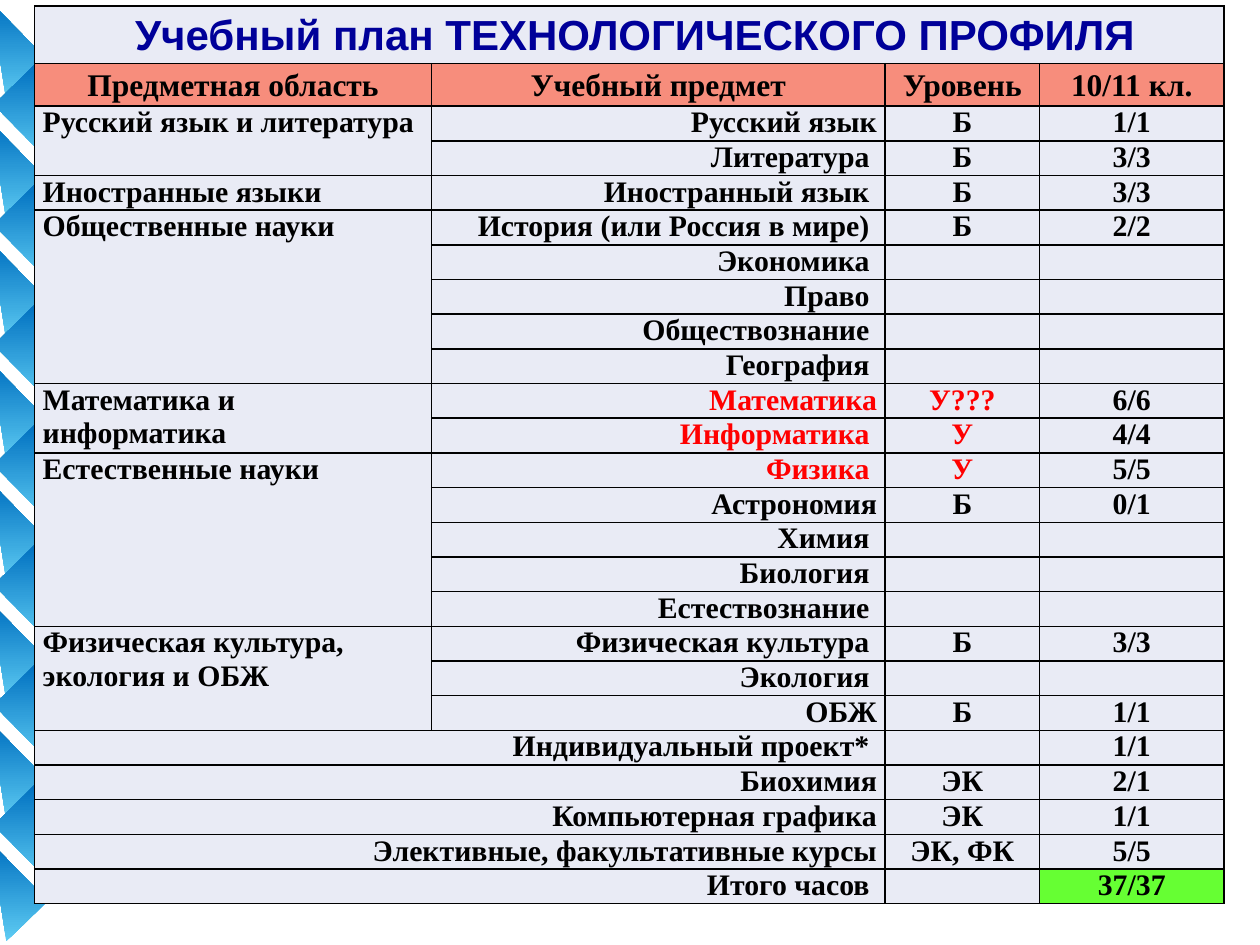
from dataclasses import dataclass

from lxml import etree
from pptx import Presentation
from pptx.dml.color import RGBColor
from pptx.enum.text import PP_ALIGN
from pptx.oxml.ns import qn
from pptx.util import Cm, Pt

LEFT, CENTER, RIGHT = PP_ALIGN.LEFT, PP_ALIGN.CENTER, PP_ALIGN.RIGHT


@dataclass(frozen=True)
class Theme:
    title_font: str = "Arial"
    body_font: str = "Times New Roman"
    title_size: int = 24
    header_size: int = 18
    body_size: int = 17
    empty_size: int = 12
    title: str = "000099"
    ink: str = "000000"
    advanced: str = "FF0000"
    cell: str = "E9EBF5"
    header: str = "F78D7C"
    total: str = "66FF33"
    ribbon_light: str = "5ECCF3"
    ribbon_dark: str = "0070C0"
    border: float = 1


THEME = Theme()

TITLE = " Учебный план ТЕХНОЛОГИЧЕСКОГО ПРОФИЛЯ"
HEADERS = ("Предметная область", "Учебный предмет", "Уровень", "10/11 кл.")

# Subject area -> (subject, level, hours)
AREAS = {
    "Русский язык и литература": [
        ("Русский язык", "Б", "1/1"), ("Литература ", "Б", "3/3")],
    "Иностранные языки": [("Иностранный язык ", "Б", "3/3")],
    "Общественные науки": [
        ("История (или Россия в мире) ", "Б", "2/2"), ("Экономика ", "", ""),
        ("Право ", "", ""), ("Обществознание ", "", ""), ("География ", "", "")],
    "Математика и информатика": [
        ("Математика", "У???", "6/6"), ("Информатика ", "У", "4/4")],
    "Естественные науки": [
        ("Физика ", "У", "5/5"), ("Астрономия", "Б", "0/1"), ("Химия ", "", ""),
        ("Биология ", "", ""), ("Естествознание ", "", "")],
    "Физическая культура, экология и ОБЖ": [
        ("Физическая культура ", "Б", "3/3"), ("Экология ", "", ""),
        ("ОБЖ", "Б", "1/1")],
}
EXTRAS = [
    ("Индивидуальный проект* ", "", "1/1"),
    ("Биохимия", "ЭК", "2/1"),
    ("Компьютерная графика", "ЭК", "1/1"),
    ("Элективные, факультативные курсы", "ЭК, ФК", "5/5"),
    ("Итого часов ", "", "37/37"),
]

# Sizes in centimetres
COLUMN_WIDTHS = (8.0, 9.14, 3.12, 3.71)
TITLE_HEIGHT, HEADER_HEIGHT, ROW_HEIGHT = 1.16, 0.86, 0.7

# Side ribbon: (left, first top, count, corners as parts of the facet's box)
FACET_WIDTH, FACET_HEIGHT, FACET_STEP, FACET_TURN = 1.63, 1.17, 2.42, 45.6
FACET_COLUMNS = (
    (-0.84, 0.46, 8, ((1, 0), (0, 0), (1, 1))),
    (0.05, 1.7, 7, ((0, 0), (0, 1), (1, 1))),
)


def add_facet(slide, left, top, corners):
    """Draw one turned triangle whose gradient stays upright."""
    points = [(Cm(left + x * FACET_WIDTH), Cm(top + y * FACET_HEIGHT))
              for x, y in corners]
    outline = slide.shapes.build_freeform(*points[0])
    outline.add_line_segments(points[1:], close=True)
    facet = outline.convert_to_shape()
    facet.rotation = FACET_TURN
    facet.shadow.inherit = False
    facet.line.fill.background()
    facet.fill.gradient()
    facet.fill.gradient_angle = 90 + FACET_TURN
    for stop, color in zip(facet.fill.gradient_stops,
                           (THEME.ribbon_light, THEME.ribbon_dark)):
        stop.color.rgb = RGBColor.from_string(color)


def add_ribbon(slide):
    for left, top, count, corners in FACET_COLUMNS:
        for step in range(count):
            add_facet(slide, left, top + step * FACET_STEP, corners)


def write(cell, text, *, align=CENTER, font=THEME.body_font,
          size=THEME.body_size, color=THEME.ink, spacing=None):
    paragraph = cell.text_frame.paragraphs[0]
    paragraph.alignment = align
    if spacing:
        paragraph.line_spacing = spacing
    if not text:
        # An empty cell needs its own size so the row stays low
        etree.SubElement(paragraph._p, qn("a:endParaRPr"),
                         sz=str(THEME.empty_size * 100))
        return
    run = paragraph.add_run()
    run.text = text
    run.font.name = font
    run.font.size = Pt(size)
    run.font.bold = True
    run.font.color.rgb = RGBColor.from_string(color)


def style_cell(cell, fill=THEME.cell):
    cell.margin_left = cell.margin_right = Cm(0.16)
    cell.margin_top = cell.margin_bottom = 0
    properties = cell._tc.get_or_add_tcPr()
    for side in ("a:lnL", "a:lnR", "a:lnT", "a:lnB"):
        line = etree.SubElement(properties, qn(side), w=str(Pt(THEME.border)))
        solid = etree.SubElement(line, qn("a:solidFill"))
        etree.SubElement(solid, qn("a:srgbClr"), val=THEME.ink)
    cell.fill.solid()
    cell.fill.fore_color.rgb = RGBColor.from_string(fill)


def add_plan_grid(slide):
    """Add the empty, sized and coloured table."""
    body_rows = sum(map(len, AREAS.values())) + len(EXTRAS)
    heights = [TITLE_HEIGHT, HEADER_HEIGHT] + [ROW_HEIGHT] * body_rows
    plan = slide.shapes.add_table(
        len(heights), len(COLUMN_WIDTHS), Cm(0.7), Cm(0.12),
        Cm(sum(COLUMN_WIDTHS)), Cm(sum(heights))).table
    plan.first_row = plan.horz_banding = False
    for column, width in zip(plan.columns, COLUMN_WIDTHS):
        column.width = Cm(width)
    for row, height in zip(plan.rows, heights):
        row.height = Cm(height)
    last = (len(heights) - 1, len(COLUMN_WIDTHS) - 1)
    for r in range(len(heights)):
        for c in range(len(COLUMN_WIDTHS)):
            fill = THEME.header if r == 1 else THEME.cell
            style_cell(plan.cell(r, c), THEME.total if (r, c) == last else fill)
    return plan


def write_lesson(plan, row, lesson, subject_column=1):
    subject, level, hours = lesson
    color = THEME.advanced if level.startswith("У") else THEME.ink
    write(plan.cell(row, subject_column), subject, align=RIGHT, color=color)
    write(plan.cell(row, 2), level, color=color)
    write(plan.cell(row, 3), hours)


def fill_plan(plan):
    # Title and column headings
    plan.cell(0, 0).merge(plan.cell(0, 3))
    write(plan.cell(0, 0), TITLE, font=THEME.title_font,
          size=THEME.title_size, color=THEME.title, spacing=1.15)
    for column, header in enumerate(HEADERS):
        write(plan.cell(1, column), header, size=THEME.header_size, spacing=1.15)

    # Subject areas
    row = 2
    for area, lessons in AREAS.items():
        if len(lessons) > 1:
            plan.cell(row, 0).merge(plan.cell(row + len(lessons) - 1, 0))
        write(plan.cell(row, 0), area, align=LEFT)
        for lesson in lessons:
            write_lesson(plan, row, lesson)
            row += 1

    # Electives and total
    for row, extra in enumerate(EXTRAS, start=row):
        plan.cell(row, 0).merge(plan.cell(row, 1))
        write_lesson(plan, row, extra, subject_column=0)


def main():
    deck = Presentation()
    deck.slide_width, deck.slide_height = Cm(25.4), Cm(19.05)
    slide = deck.slides.add_slide(deck.slide_layouts[6])
    add_ribbon(slide)
    fill_plan(add_plan_grid(slide))
    deck.save("out.pptx")


if __name__ == "__main__":
    main()
